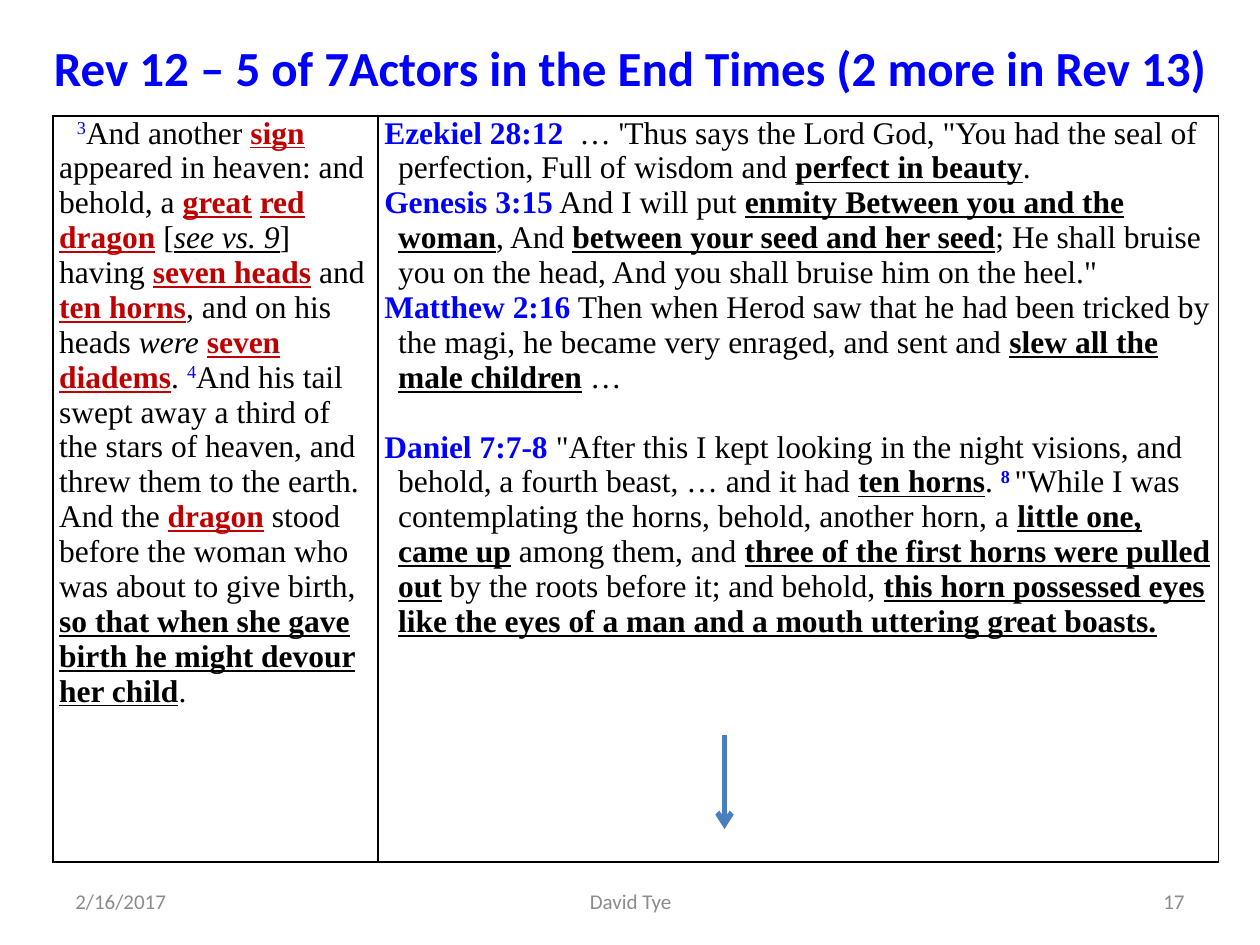
"""Build the Revelation 12 slide: title, two-column scripture table, arrow and footer."""
import lxml.etree
import pptx
import pptx.dml.color
import pptx.enum.shapes
import pptx.enum.text
import pptx.oxml.ns
import pptx.util

Inches = pptx.util.Inches
Pt = pptx.util.Pt
qn = pptx.oxml.ns.qn
ALIGN = pptx.enum.text.PP_ALIGN
ANCHOR = pptx.enum.text.MSO_ANCHOR

COLORS = {"blue": "0000FF", "black": "000000", "red": "C00000", "gray": "8C8C8C", "arrow": "4B7EBC"}

STYLES = {
    "plain": ("black", ""),
    "strong": ("black", "bu"),
    "italic": ("black", "i"),
    "note": ("black", "iu"),
    "actor": ("red", "bu"),
    "gap": ("red", "b"),
    "reference": ("blue", "b"),
    "verse": ("blue", "s"),
    "bold verse": ("blue", "bs"),
    "footer": ("gray", ""),
}

REVELATION = [
    ("verse", "3"), ("plain", "And another "), ("actor", "sign"),
    ("plain", " appeared in heaven: and behold, a "), ("actor", "great"), ("gap", " "),
    ("actor", "red"), ("gap", " "), ("actor", "dragon"), ("plain", " ["),
    ("note", "see vs. 9"), ("plain", "] having "), ("actor", "seven heads"),
    ("plain", " and "), ("actor", "ten horns"), ("plain", ", and on his heads "),
    ("italic", "were "), ("actor", "seven diadems"), ("plain", ". "), ("verse", "4"),
    ("plain", "And his tail swept away a third of the stars of heaven, and threw them "
              "to the earth. And the "),
    ("actor", "dragon"), ("plain", " stood before the woman who was about to give birth, "),
    ("strong", "so that when she gave birth he might devour her child"), ("plain", "."),
]
EZEKIEL = [
    ("reference", "Ezekiel 28:12  "),
    ("plain", "… 'Thus says the Lord God, \"You had the seal of perfection, Full of wisdom and "),
    ("strong", "perfect in beauty"), ("plain", "."),
]
GENESIS = [
    ("reference", "Genesis 3:15"), ("plain", " And I will put "),
    ("strong", "enmity Between you and the woman"), ("plain", ", And "),
    ("strong", "between your seed and her seed"),
    ("plain", "; He shall bruise you on the head, And you shall bruise him on the heel.\""),
]
MATTHEW = [
    ("reference", "Matthew 2:16"),
    ("plain", " Then when Herod saw that he had been tricked by the magi, he became very "
              "enraged, and sent and "),
    ("strong", "slew all the male children"), ("plain", " …"),
]
DANIEL = [
    ("reference", "Daniel 7:7-8 "),
    ("plain", "\"After this I kept looking in the night visions, and behold, a fourth beast, "
              "… and it had "),
    ("strong", "ten horns"), ("plain", ". "), ("bold verse", "8 "),
    ("plain", "\"While I was contemplating the horns, behold, another horn, a "),
    ("strong", "little one, came up"), ("plain", " among them, and "),
    ("strong", "three of the first horns were pulled out"),
    ("plain", " by the roots before it; and behold, "),
    ("strong", "this horn possessed eyes like the eyes of a man and a mouth uttering great boasts."),
]


def add_span(para, text, style, size, font):
    color, marks = STYLES[style]
    span = para.add_run()
    span.text = text
    span.font.name = font
    span.font.size = Pt(size)
    span.font.color.rgb = pptx.dml.color.RGBColor.from_string(COLORS[color])
    span.font.bold = "b" in marks
    span.font.italic = "i" in marks
    span.font.underline = "u" in marks
    if "s" in marks:
        span._r.get_or_add_rPr().set("baseline", "30000")


def add_label(page, place, text, style, size, align, anchor):
    box = page.shapes.add_textbox(*[Inches(length) for length in place])
    box.text_frame.word_wrap = style == "footer"
    box.text_frame.vertical_anchor = anchor
    para = box.text_frame.paragraphs[0]
    para.alignment = align
    add_span(para, text, style, size, "Calibri")


deck = pptx.Presentation()
deck.slide_width = Inches(10)
deck.slide_height = Inches(7.5)
page = deck.slides.add_slide(deck.slide_layouts[6])

for left, width, text, align in [
    (0.5, 2.33, "2/16/2017", ALIGN.LEFT),
    (3.42, 3.17, "David Tye", ALIGN.CENTER),
    (7.17, 2.33, "17", ALIGN.RIGHT),
]:
    add_label(page, (left, 6.95, width, 0.4), text, "footer", 12, align, ANCHOR.MIDDLE)

add_label(page, (0.33, 0.25, 9.46, 0.57),
          "Rev 12 – 5 of 7Actors in the End Times (2 more in Rev 13)",
          "reference", 28, ALIGN.LEFT, ANCHOR.TOP)

table = page.shapes.add_table(1, 2, Inches(0.42), Inches(0.92), Inches(9.25), Inches(5.92)).table
table.first_row = False
table.horz_banding = False

columns = [(2.58, 0, 0.14, [REVELATION]), (6.67, 0.11, -0.11, [EZEKIEL, GENESIS, MATTHEW, DANIEL])]
for index, (width, margin, indent, passages) in enumerate(columns):
    table.columns[index].width = Inches(width)
    cell = table.cell(0, index)
    cell.margin_left = cell.margin_right = Inches(0.05)
    cell.margin_top = cell.margin_bottom = 0
    cell.vertical_anchor = ANCHOR.TOP
    properties = cell._tc.get_or_add_tcPr()
    for side in ("a:lnL", "a:lnR", "a:lnT", "a:lnB"):
        border = lxml.etree.SubElement(properties, qn(side), w=str(Pt(1)))
        fill = lxml.etree.SubElement(border, qn("a:solidFill"))
        lxml.etree.SubElement(fill, qn("a:srgbClr"), val=COLORS["black"])
    cell.fill.background()
    for number, passage in enumerate(passages):
        para = cell.text_frame.add_paragraph() if number else cell.text_frame.paragraphs[0]
        para_properties = para._p.get_or_add_pPr()
        para_properties.set("marL", str(Inches(margin)))
        para_properties.set("indent", str(Inches(indent)))
        if passage is DANIEL:
            para.space_before = Pt(20)
        for style, text in passage:
            add_span(para, text, style, 18, "Times New Roman")

arrow = page.shapes.add_connector(pptx.enum.shapes.MSO_CONNECTOR.STRAIGHT,
                                  Inches(5.75), Inches(5.83), Inches(5.75), Inches(6.58))
arrow.line.width = Pt(3)
arrow.line.color.rgb = pptx.dml.color.RGBColor.from_string(COLORS["arrow"])
lxml.etree.SubElement(arrow.line._get_or_add_ln(), qn("a:tailEnd"), type="arrow")
lxml.etree.SubElement(arrow._element.spPr, qn("a:effectLst"))

deck.save("out.pptx")
